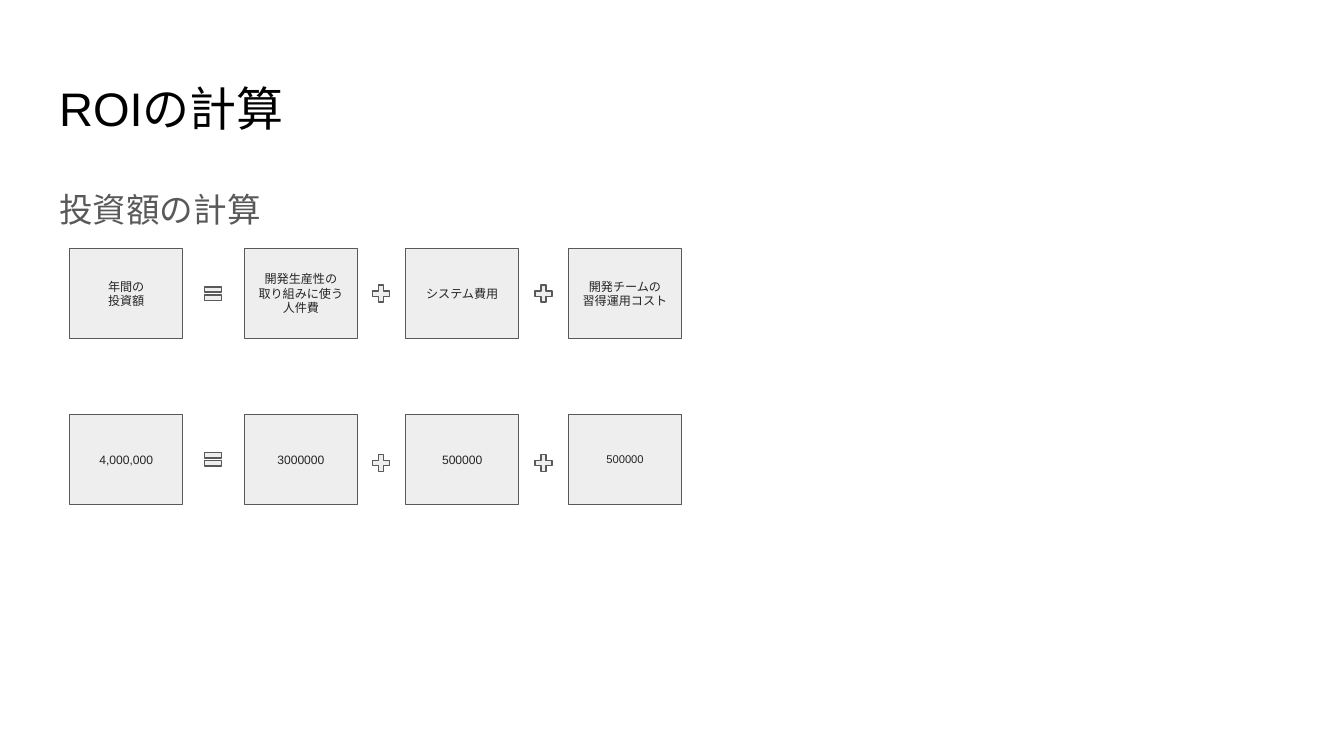
from dataclasses import dataclass

from lxml import etree
from pptx import Presentation
from pptx.dml.color import RGBColor
from pptx.enum.shapes import MSO_SHAPE
from pptx.enum.text import MSO_ANCHOR, MSO_AUTO_SIZE, PP_ALIGN
from pptx.oxml.ns import qn
from pptx.util import Pt

RECTANGLE = MSO_SHAPE.RECTANGLE
EQUAL, PLUS = MSO_SHAPE.MATH_EQUAL, MSO_SHAPE.MATH_PLUS
TOP, MIDDLE = MSO_ANCHOR.TOP, MSO_ANCHOR.MIDDLE
LEFT, CENTER = PP_ALIGN.LEFT, PP_ALIGN.CENTER
NO_AUTOFIT = MSO_AUTO_SIZE.NONE


@dataclass(frozen=True)
class Theme:
    font: str = "Arial"
    title: RGBColor = RGBColor(0, 0, 0)
    body: RGBColor = RGBColor(0x59, 0x59, 0x59)
    term: RGBColor = RGBColor(0x25, 0x25, 0x25)
    fill: RGBColor = RGBColor(0xEE, 0xEE, 0xEE)
    line: RGBColor = RGBColor(0x59, 0x59, 0x59)
    title_size: float = 25.2
    body_size: float = 18
    term_size: float = 6.5
    small_term_size: float = 6


THEME = Theme()

# Layout in points
TERM_LEFTS = (37.4, 131, 217.4, 304.6)
TERM_WIDTH, TERM_HEIGHT = 60.5, 48.2
SIGN_LEFTS = (108, 198, 285.1)
SIGN_SIZE = 12.2
SIGNS = (EQUAL, PLUS, PLUS)
SIGN_ADJUSTMENTS = {EQUAL: (0.235, 0.118), PLUS: (0.235,)}


def write_lines(frame, lines, size, color, align, anchor):
    """Write one paragraph per line into a text frame."""
    frame.word_wrap = True
    frame.auto_size = NO_AUTOFIT
    frame.vertical_anchor = anchor
    frame.margin_left = frame.margin_right = Pt(7.2)
    frame.margin_top = frame.margin_bottom = Pt(7.2)
    for index, line in enumerate(lines):
        paragraph = frame.add_paragraph() if index else frame.paragraphs[0]
        paragraph.alignment = align
        paragraph.space_before = Pt(0)
        run = paragraph.add_run()
        run.text = line
        run.font.name = THEME.font
        run.font.size = Pt(size)
        run.font.color.rgb = color


def fill_placeholder(placeholder, top, height, text, size, color):
    placeholder.left, placeholder.top = Pt(24.5), Pt(top)
    placeholder.width, placeholder.height = Pt(671), Pt(height)
    write_lines(placeholder.text_frame, [text], size, color, LEFT, TOP)


def remove_bullet(paragraph):
    properties = paragraph._p.get_or_add_pPr()
    properties.set("marL", "0")
    properties.set("indent", "0")
    etree.SubElement(properties, qn("a:buNone"))


def add_outlined_shape(slide, kind, left, top, width, height):
    shape = slide.shapes.add_shape(kind, Pt(left), Pt(top), Pt(width), Pt(height))
    shape.shadow.inherit = False
    shape.fill.solid()
    shape.fill.fore_color.rgb = THEME.fill
    shape.line.color.rgb = THEME.line
    shape.line.width = Pt(0.75)
    return shape


def add_term(slide, left, top, text, size):
    term = add_outlined_shape(slide, RECTANGLE, left, top, TERM_WIDTH, TERM_HEIGHT)
    write_lines(term.text_frame, text.split("\n"), size, THEME.term, CENTER, MIDDLE)


def add_sign(slide, kind, left, top):
    sign = add_outlined_shape(slide, kind, left, top, SIGN_SIZE, SIGN_SIZE)
    for index, value in enumerate(SIGN_ADJUSTMENTS[kind]):
        sign.adjustments[index] = value


def add_equation(slide, top, terms, last_size, plus_drop):
    """Draw a row: total = cost + cost + cost."""
    sizes = [THEME.term_size] * 3 + [last_size]
    for left, text, size in zip(TERM_LEFTS, terms, sizes):
        add_term(slide, left, top, text, size)
    sign_top = top + (TERM_HEIGHT - SIGN_SIZE) / 2
    for left, kind in zip(SIGN_LEFTS, SIGNS):
        add_sign(slide, kind, left, sign_top + (plus_drop if kind == PLUS else 0))


def main():
    deck = Presentation()
    deck.slide_width, deck.slide_height = Pt(720), Pt(405)
    slide = deck.slides.add_slide(deck.slide_layouts[1])

    # Title and subject
    fill_placeholder(slide.shapes.title, 35.3, 45.4, "ROIの計算",
                     THEME.title_size, THEME.title)
    subject = slide.placeholders[1]
    fill_placeholder(subject, 90.7, 269.3, "投資額の計算",
                     THEME.body_size, THEME.body)
    paragraph = subject.text_frame.paragraphs[0]
    paragraph.line_spacing = 1.15
    paragraph.space_after = Pt(12)
    remove_bullet(paragraph)

    # Formula in words, then in figures
    add_equation(slide, 133.2,
                 ("年間の\n投資額", "開発生産性の\n取り組みに使う\n人件費",
                  "システム費用", "開発チームの\n習得運用コスト"),
                 THEME.term_size, 0)
    add_equation(slide, 222, ("4,000,000", "3000000", "500000", "500000"),
                 THEME.small_term_size, 2)

    deck.save("out.pptx")


if __name__ == "__main__":
    main()
